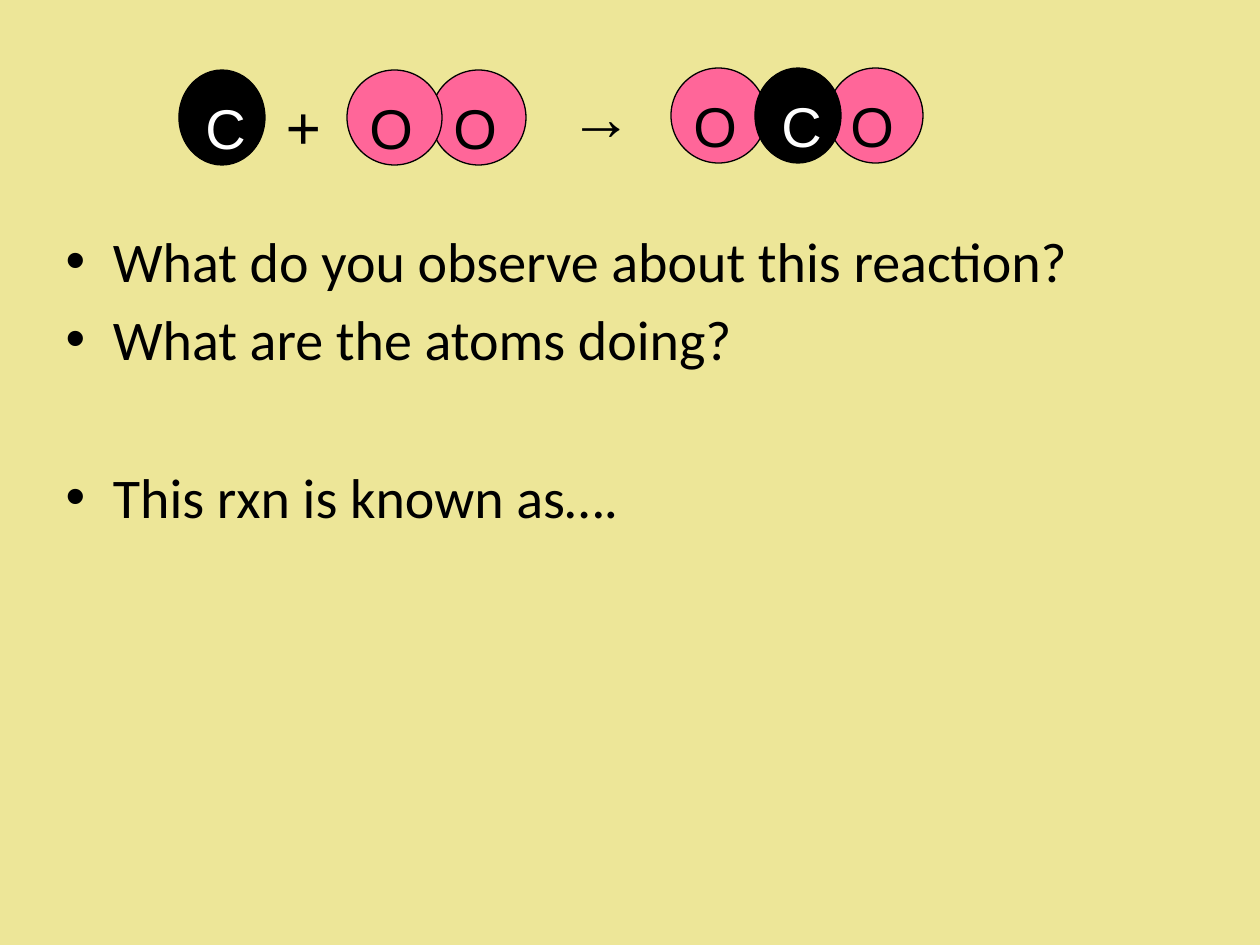
"""Build the slide on carbon and oxygen joining into carbon dioxide."""
from dataclasses import dataclass

from pptx import Presentation
from pptx import util as u
from pptx.dml.color import RGBColor
from pptx.enum import shapes, text


@dataclass(frozen=True)
class Theme:
    back: str = "EDE698"
    pink: str = "FF6699"
    black: str = "000000"
    white: str = "FFFFFF"
    sans: str = "Arial"
    serif: str = "Times New Roman"
    body: str = "Calibri"
    big: int = 32
    sign: int = 36


look = Theme()
PX = u.Inches(1) // 126


def rgb(code):
    return RGBColor.from_string(code)


def write(para, words, face=look.sans, size=look.big, color=look.black, bold=False):
    run = para.add_run()
    run.text = words
    run.font.name = face
    run.font.size = u.Pt(size)
    run.font.bold = bold
    run.font.color.rgb = rgb(color)


deck = Presentation()
deck.slide_width = 1260 * PX
deck.slide_height = 945 * PX
slide = deck.slides.add_slide(deck.slide_layouts[1])
slide.background.fill.solid()
slide.background.fill.fore_color.rgb = rgb(look.back)

title, body = slide.placeholders
title.element.getparent().remove(title.element)
body.left, body.top, body.width, body.height = (n * PX for n in (53, 220, 1166, 592))
frame = body.text_frame
frame.auto_size = text.MSO_AUTO_SIZE.NONE
asks = [
    ("What do you observe about this reaction?", 6.4),
    ("What are the atoms doing?", 6.4),
    ("This rxn is known as….", 51.5),
]
for i, (words, gap) in enumerate(asks):
    para = frame.add_paragraph() if i else frame.paragraphs[0]
    para.space_before = u.Pt(gap)
    write(para, words, face=look.body)

# kind: width, fill, letter colour, letter shift
kinds = {
    "O": (95, look.pink, look.black, 10),
    "C": (86, look.black, look.white, 14),
}
atoms = [("O", 431, 70), ("O", 347, 70), ("C", 179, 70),
         ("O", 671, 68), ("O", 828, 68), ("C", 755, 68)]
labels = []
for name, x, y in atoms:
    wide, fill, ink, shift = kinds[name]
    ball = slide.shapes.add_shape(
        shapes.MSO_SHAPE.OVAL, x * PX, y * PX, wide * PX, 95 * PX)
    ball.shadow.inherit = False
    ball.fill.solid()
    ball.fill.fore_color.rgb = rgb(fill)
    ball.line.color.rgb = rgb(look.black)
    ball.line.width = u.Pt(0.75)
    labels.append((name, x + shift, y + 17, 86, 79, dict(color=ink)))

sign = dict(face=look.serif, size=look.sign, bold=True)
labels += [("+", 273, 81, 63, 88, sign), ("→", 557, 71, 95, 88, sign)]
for words, x, y, wide, high, style in labels:
    box = slide.shapes.add_textbox(x * PX, y * PX, wide * PX, high * PX)
    box.text_frame.word_wrap = True
    write(box.text_frame.paragraphs[0], words, **style)

deck.save("out.pptx")
